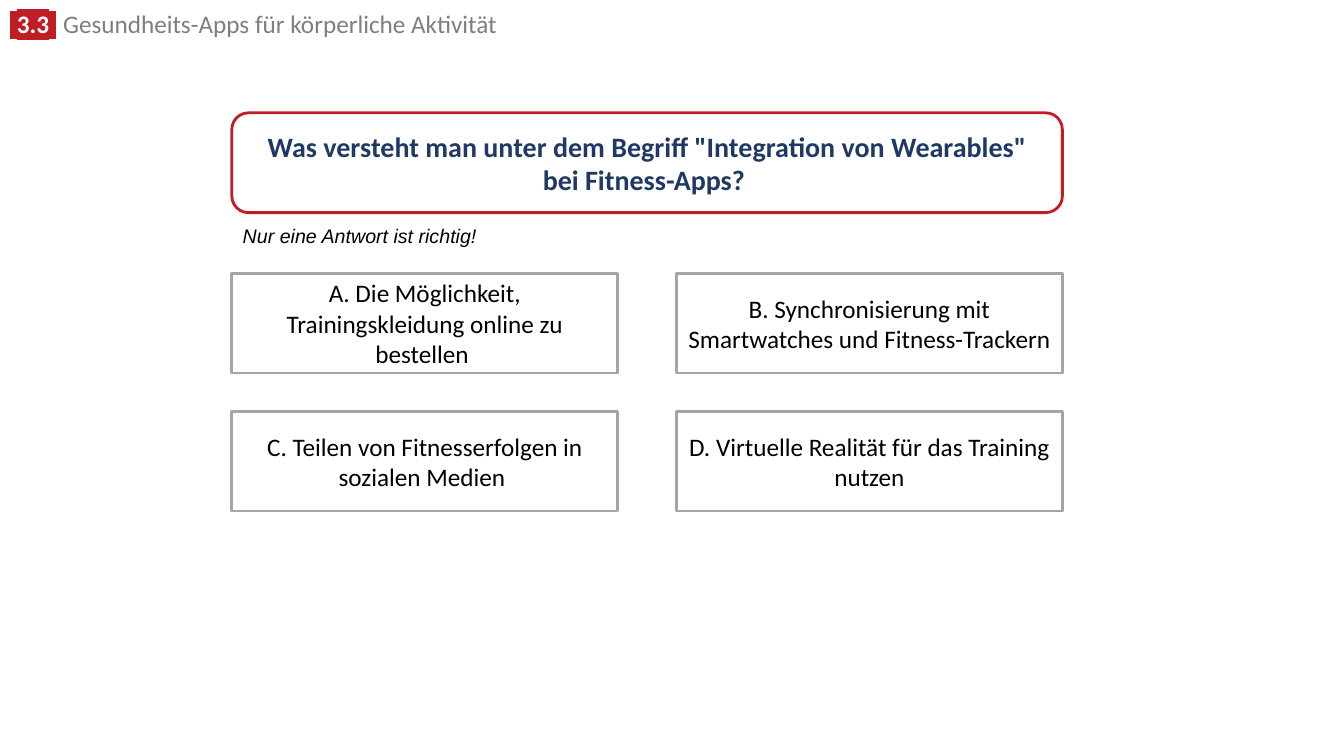
from lxml.etree import SubElement
from pptx import Presentation
from pptx.dml.color import RGBColor
from pptx.enum.shapes import MSO_SHAPE
from pptx.enum.text import MSO_ANCHOR, MSO_AUTO_SIZE, PP_ALIGN
from pptx.oxml.ns import qn
from pptx.util import Pt

RED = RGBColor(0xC0, 0x1E, 0x24)
NAVY = RGBColor(0x20, 0x38, 0x64)
GRAY = RGBColor(0x7F, 0x7F, 0x7F)
BORDER = RGBColor(0xA5, 0xA5, 0xA5)
WHITE = RGBColor(0xFF, 0xFF, 0xFF)
BLACK = RGBColor(0x00, 0x00, 0x00)

QUESTION = 'Was versteht man unter dem Begriff "Integration von Wearables" bei Fitness-Apps? '
HINT = "Nur eine Antwort ist richtig!"
ANSWERS = [
    "A. Die Möglichkeit, Trainingskleidung online zu bestellen ",
    "B. Synchronisierung mit Smartwatches und Fitness-Trackern ",
    "C. Teilen von Fitnesserfolgen in sozialen Medien ",
    "D. Virtuelle Realität für das Training nutzen",
]


def style_font(font, name, size, color, bold=False, italic=False):
    """Set the look of a font."""
    font.name, font.size = name, Pt(size)
    font.bold, font.italic = bold, italic
    font.color.rgb = color


def highlight(run, color):
    """Put a highlight colour behind a run that already has a text colour."""
    properties = run.font._element
    mark = SubElement(properties, qn("a:highlight"))
    SubElement(mark, qn("a:srgbClr"), val=str(color))
    properties.find(qn("a:solidFill")).addnext(mark)


def add_text_box(slide, left, top, width, height, wrap):
    """Add a text box that grows with its text and return its frame."""
    frame = slide.shapes.add_textbox(Pt(left), Pt(top), Pt(width), Pt(height)).text_frame
    frame.word_wrap = wrap
    frame.auto_size = MSO_AUTO_SIZE.SHAPE_TO_FIT_TEXT
    return frame


def add_header(slide, left, top, width, height, number, title):
    """Add the chapter number on a red mark, followed by the chapter title."""
    paragraph = add_text_box(slide, left, top, width, height, True).paragraphs[0]
    paragraph.line_spacing = 0.8
    parts = [
        (" ", "Arial", True),
        (number, "Calibri", True),
        (" ", "Arial", True),
        (" ", "Arial", False),
        (title, "Calibri", False),
    ]
    for text, font_name, marked in parts:
        run = paragraph.add_run()
        run.text = text
        style_font(run.font, font_name, 18, WHITE if marked else GRAY, bold=marked)
        if marked:
            highlight(run, RED)


def add_box(slide, kind, left, top, width, height, text, border):
    """Add a white outlined box with centred text and return its run."""
    shape = slide.shapes.add_shape(kind, Pt(left), Pt(top), Pt(width), Pt(height))
    shape.shadow.inherit = False
    shape.fill.solid()
    shape.fill.fore_color.rgb = WHITE
    shape.line.color.rgb = border
    shape.line.width = Pt(2)
    frame = shape.text_frame
    frame.word_wrap = True
    frame.vertical_anchor = MSO_ANCHOR.MIDDLE
    frame.text = text
    frame.paragraphs[0].alignment = PP_ALIGN.CENTER
    return frame.paragraphs[0].runs[0]


def add_quiz(slide, left, top, width, box_height):
    """Add the question, the hint below it and a two-column grid of answers."""
    question = add_box(slide, MSO_SHAPE.ROUNDED_RECTANGLE, left, top, width,
                       box_height, QUESTION, RED)
    style_font(question.font, "Calibri", 20, NAVY, bold=True)

    answer_width, answers_top, row_step = 275.8, top + 114.5, 98.6
    column_step = width - answer_width
    for index, answer in enumerate(ANSWERS):
        row, column = divmod(index, 2)
        run = add_box(slide, MSO_SHAPE.RECTANGLE, left + column * column_step,
                      answers_top + row * row_step, answer_width, box_height,
                      answer, BORDER)
        style_font(run.font, "Calibri", 18, BLACK)

    frame = add_text_box(slide, left + 0.7, top + 75.6, 182.9, 24.5, False)
    frame.text = HINT
    style_font(frame.paragraphs[0].runs[0].font, "Arial", 14, BLACK, italic=True)


def main():
    """Build the quiz slide and save it."""
    presentation = Presentation()
    presentation.slide_width, presentation.slide_height = Pt(960), Pt(540)
    slide = presentation.slides.add_slide(presentation.slide_layouts[6])
    add_header(slide, 0, 6.5, 685.4, 25.2, "3.3", "Gesundheits-Apps für körperliche Aktivität")
    add_quiz(slide, 165.6, 80.6, 593.3, 71.3)
    presentation.save("out.pptx")


if __name__ == "__main__":
    main()
